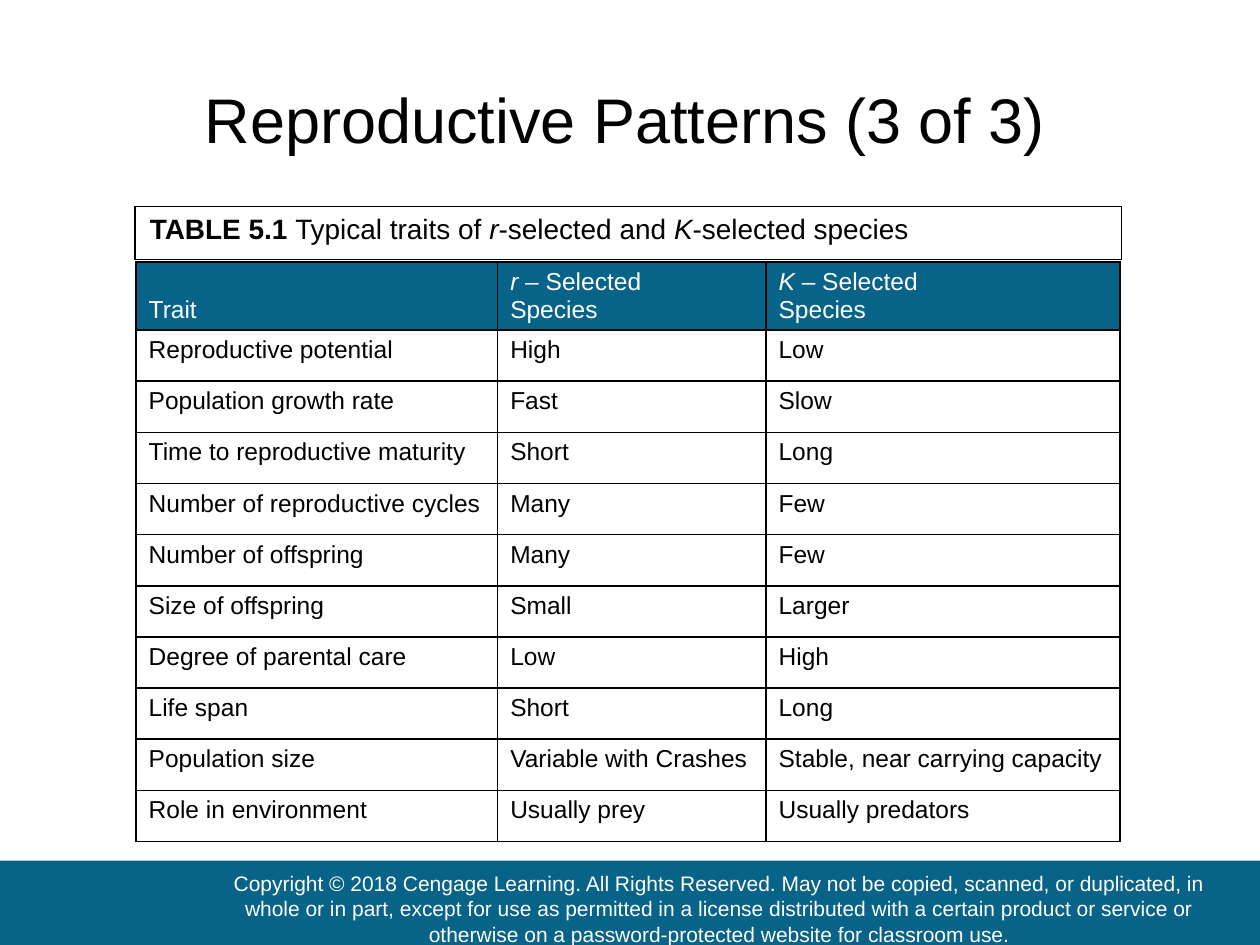
from lxml.etree import SubElement
from pptx import Presentation
from pptx.dml.color import RGBColor
from pptx.enum.shapes import MSO_SHAPE
from pptx.enum.text import MSO_ANCHOR, PP_ALIGN
from pptx.oxml.ns import qn
from pptx.util import Inches, Pt

COLORS = {"teal": "076387", "white": "FFFFFF", "black": "000000"}
FONT = "Arial"

CAPTION = [("TABLE 5.1 ", "bold"), ("Typical traits of ", ""), ("r", "italic"),
           ("-selected and ", ""), ("K", "italic"), ("-selected species", "")]
HEADERS = [
    [[("Trait", "")]],
    [[("r", "italic"), (" – Selected", "")], [("Species", "")]],
    [[("K", "italic"), (" – Selected", "")], [("Species", "")]],
]
TRAITS = [
    ("Reproductive potential", "High", "Low"),
    ("Population growth rate", "Fast", "Slow"),
    ("Time to reproductive maturity", "Short", "Long"),
    ("Number of reproductive cycles", "Many", "Few"),
    ("Number of offspring", "Many", "Few"),
    ("Size of offspring", "Small", "Larger"),
    ("Degree of parental care", "Low", "High"),
    ("Life span", "Short", "Long"),
    ("Population size", "Variable with Crashes", "Stable, near carrying capacity"),
    ("Role in environment", "Usually prey", "Usually predators"),
]
COPYRIGHT = (
    "Copyright © 2018 Cengage Learning. All Rights Reserved. May not be copied, "
    "scanned, or duplicated, in whole or in part, except for use as permitted in a "
    "license distributed with a certain product or service or otherwise on a "
    "password-protected website for classroom use."
)


def color(name):
    return RGBColor.from_string(COLORS[name])


def format_paragraph(paragraph, size, color_name, alignment=PP_ALIGN.LEFT):
    paragraph.alignment = alignment
    paragraph.font.name = FONT
    paragraph.font.size = Pt(size)
    paragraph.font.color.rgb = color(color_name)


def add_borders(cell):
    properties = cell._tc.get_or_add_tcPr()
    for side in ("lnL", "lnR", "lnT", "lnB"):
        line = SubElement(properties, qn(f"a:{side}"), w=str(Pt(1)))
        fill = SubElement(line, qn("a:solidFill"))
        SubElement(fill, qn("a:srgbClr"), val=COLORS["black"])


def fill_cell(cell, lines, size, text_color="black", fill_color=None):
    """Write lines of (text, style) runs into a bordered cell."""
    add_borders(cell)
    if fill_color:
        cell.fill.solid()
        cell.fill.fore_color.rgb = color(fill_color)
    else:
        cell.fill.background()
    frame = cell.text_frame
    for index, runs in enumerate(lines):
        paragraph = frame.add_paragraph() if index else frame.paragraphs[0]
        format_paragraph(paragraph, size, text_color)
        for text, style in runs:
            run = paragraph.add_run()
            run.text = text
            if style:
                setattr(run.font, style, True)


def add_plain_table(slide, rows, columns, box):
    table = slide.shapes.add_table(rows, columns, *box).table
    table.first_row = False
    table.horz_banding = False
    return table


def add_title(slide, box):
    title = slide.shapes.title
    title.left, title.top, title.width, title.height = box
    frame = title.text_frame
    frame.text = "Reproductive Patterns (3 of 3)"
    frame.vertical_anchor = MSO_ANCHOR.MIDDLE
    format_paragraph(frame.paragraphs[0], 36, "black", PP_ALIGN.CENTER)


def add_caption(slide, box):
    cell = add_plain_table(slide, 1, 1, box).cell(0, 0)
    cell.margin_left = cell.margin_right = Inches(0.12)
    cell.margin_top = cell.margin_bottom = Inches(0.06)
    fill_cell(cell, [CAPTION], 16)


def add_traits_table(slide, box):
    table = add_plain_table(slide, len(TRAITS) + 1, len(HEADERS), box)
    for column, width in zip(table.columns, (2.87, 2.13, 2.81)):
        column.width = Inches(width)
    header_height = Inches(0.54)
    body_height = (box[3] - header_height) // len(TRAITS)
    for index, row in enumerate(table.rows):
        row.height = body_height if index else header_height

    # Header row
    for cell, lines in zip(table.rows[0].cells, HEADERS):
        cell.vertical_anchor = MSO_ANCHOR.BOTTOM
        fill_cell(cell, lines, 14, "white", "teal")

    # Trait rows
    for row_index, values in enumerate(TRAITS, start=1):
        for cell, value in zip(table.rows[row_index].cells, values):
            fill_cell(cell, [[(value, "")]], 14)


def add_band(slide, box):
    band = slide.shapes.add_shape(MSO_SHAPE.RECTANGLE, *box)
    band.shadow.inherit = False
    band.fill.solid()
    band.fill.fore_color.rgb = color("teal")
    band.line.fill.background()
    return band


def add_footer(slide, box):
    left, top, width, height = box
    add_band(slide, box)
    notice = add_band(slide, (left + Inches(1.68), top + Inches(0.09),
                              Inches(8.08), height - Inches(0.1)))
    frame = notice.text_frame
    frame.word_wrap = True
    frame.vertical_anchor = MSO_ANCHOR.MIDDLE
    frame.margin_left = frame.margin_right = 0
    frame.margin_top = frame.margin_bottom = 0
    frame.text = COPYRIGHT
    format_paragraph(frame.paragraphs[0], 12, "white", PP_ALIGN.CENTER)


def main():
    presentation = Presentation()
    presentation.slide_width = Inches(10)
    presentation.slide_height = Inches(7.5)
    slide = presentation.slides.add_slide(presentation.slide_layouts[5])
    slide.background.fill.solid()
    slide.background.fill.fore_color.rgb = color("white")

    add_footer(slide, (Inches(-0.01), Inches(6.83), Inches(10.01), Inches(0.68)))
    add_title(slide, (Inches(0.57), Inches(0.39), Inches(8.78), Inches(1.1)))
    add_caption(slide, (Inches(1.07), Inches(1.64), Inches(7.83), Inches(0.42)))
    add_traits_table(slide, (Inches(1.08), Inches(2.08), Inches(7.81), Inches(4.6)))
    presentation.save("out.pptx")


if __name__ == "__main__":
    main()
